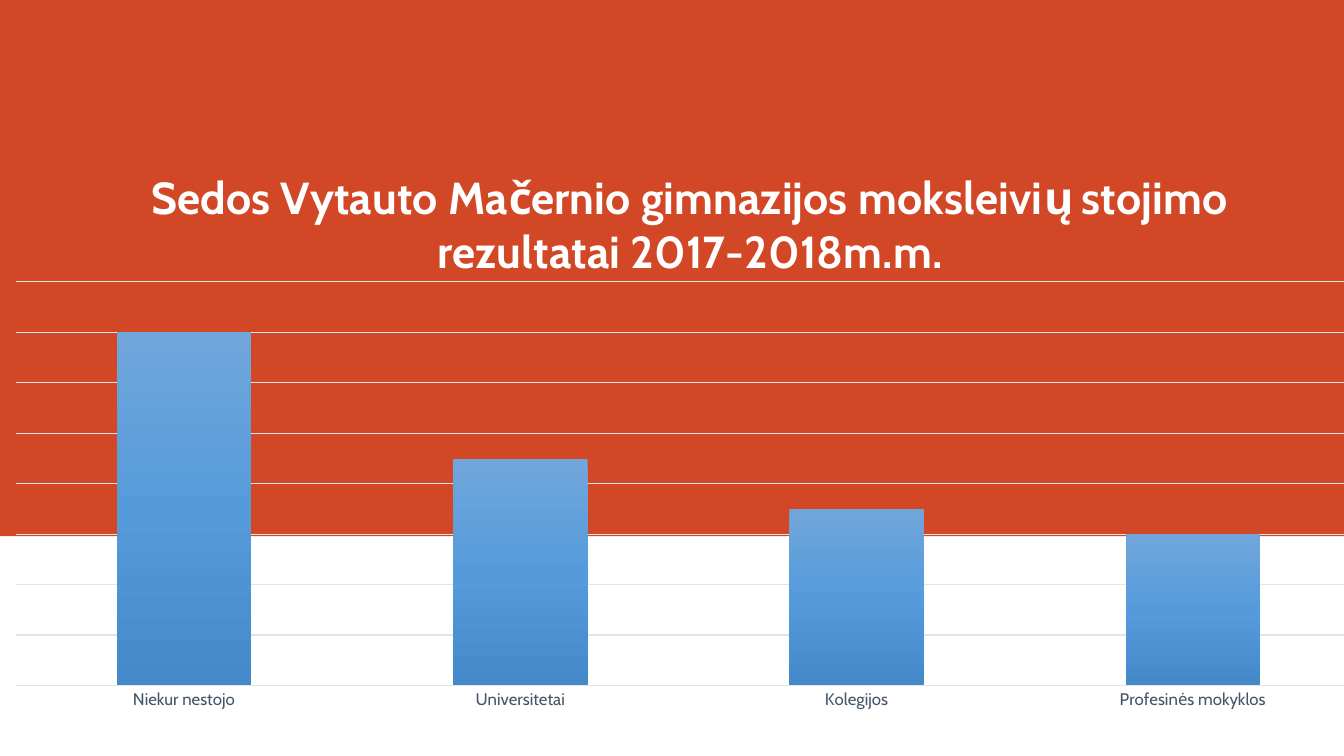
from pptx import Presentation
from pptx.chart.data import CategoryChartData
from pptx.dml.color import RGBColor
from pptx.enum.chart import XL_CHART_TYPE, XL_TICK_MARK
from pptx.enum.shapes import MSO_SHAPE
from pptx.oxml import parse_xml
from pptx.oxml.ns import nsdecls
from pptx.util import Cm, Pt

COLUMNS = XL_CHART_TYPE.COLUMN_CLUSTERED
NO_TICKS = XL_TICK_MARK.NONE
RECTANGLE = MSO_SHAPE.RECTANGLE

# Content
TITLE = "Sedos Vytauto Mačernio gimnazijos moksleivių stojimo rezultatai 2017-2018m.m."
SERIES_NAME = "Series 1"
RESULTS = {
    "Niekur nestojo": 100,
    "Universitetai": 64,
    "Kolegijos": 50,
    "Profesinės mokyklos": 43,
}

# Look
FONT = "Cabin"
RED, WHITE, SLATE, GRID = "D24726", "FFFFFF", "44546A", "E0E5EB"
BAR_STOPS = {0: "71A6DB", 50: "559BDB", 100: "448ACA"}
GRID_STEP, GRID_COUNT = 14.29, 8

# Shares of the chart's width and height
TITLE_PLACE = {"x": 0.11, "y": 0.04}
PLOT_PLACE = {"x": 0.0193, "y": 0.251, "w": 0.96, "h": 0.686}


def color(value):
    return RGBColor.from_string(value)


def set_font(font, size, value, bold=False):
    formats = {"name": FONT, "size": Pt(size), "bold": bold}
    for name, setting in formats.items():
        setattr(font, name, setting)
    font.color.rgb = color(value)


def set_line(line):
    line.color.rgb = color(GRID)
    line.width = Pt(0.75)


def manual_layout(place, inner=False):
    target = '<c:layoutTarget val="inner"/>' if inner else ""
    modes = "".join(f'<c:{key}Mode val="edge"/>' for key in "xy")
    values = "".join(f'<c:{key} val="{share}"/>' for key, share in place.items())
    return parse_xml(
        f'<c:layout {nsdecls("c")}><c:manualLayout>{target}{modes}{values}'
        "</c:manualLayout></c:layout>"
    )


def place_part(part, layout, index):
    for old in part.xpath("c:layout"):
        part.remove(old)
    part.insert(index, layout)


deck = Presentation()
deck.slide_width, deck.slide_height = Cm(33.87), Cm(19.05)
page = deck.slides.add_slide(deck.slide_layouts[6])

# Red band
band = page.shapes.add_shape(RECTANGLE, 0, 0, deck.slide_width, Cm(13.51))
band.shadow.inherit = False
band.fill.solid()
band.fill.fore_color.rgb = color(RED)
band.line.fill.background()

# Column chart
data = CategoryChartData()
data.categories = list(RESULTS)
data.add_series(SERIES_NAME, list(RESULTS.values()))
chart = page.shapes.add_chart(
    COLUMNS, Cm(-0.28), Cm(3.38), Cm(35.31), Cm(14.83), data
).chart
chart.has_legend = False
set_font(chart.font, 12, "000000")
plot = chart.plots[0]
plot.gap_width = 150
plot.vary_by_categories = False
place_part(chart._chartSpace.chart.plotArea, manual_layout(PLOT_PLACE, inner=True), 0)

# Chart title
chart.has_title = True
frame = chart.chart_title.text_frame
frame.text = TITLE
set_font(frame.paragraphs[0].runs[0].font, 32, WHITE, bold=True)
chart.chart_title.include_in_layout = False
place_part(chart.chart_title._element, manual_layout(TITLE_PLACE), 1)

# Axes and grid
categories = chart.category_axis
categories.major_tick_mark = NO_TICKS
set_font(categories.tick_labels.font, 12, SLATE)
set_line(categories.format.line)
values = chart.value_axis
scale = {
    "minimum_scale": 0,
    "maximum_scale": round(GRID_STEP * GRID_COUNT, 2),
    "major_unit": GRID_STEP,
    "has_major_gridlines": True,
    "visible": False,
}
for name, setting in scale.items():
    setattr(values, name, setting)
set_line(values.major_gridlines.format.line)

# Gradient of the columns, from top to bottom
stops = "".join(
    f'<a:gs pos="{share * 1000}"><a:srgbClr val="{value}"/></a:gs>'
    for share, value in BAR_STOPS.items()
)
gradient = parse_xml(
    f'<a:gradFill {nsdecls("a")}><a:gsLst>{stops}</a:gsLst>'
    '<a:lin ang="5400000" scaled="0"/></a:gradFill>'
)
plot.series[0]._element.get_or_add_spPr().insert(0, gradient)

deck.save("out.pptx")
